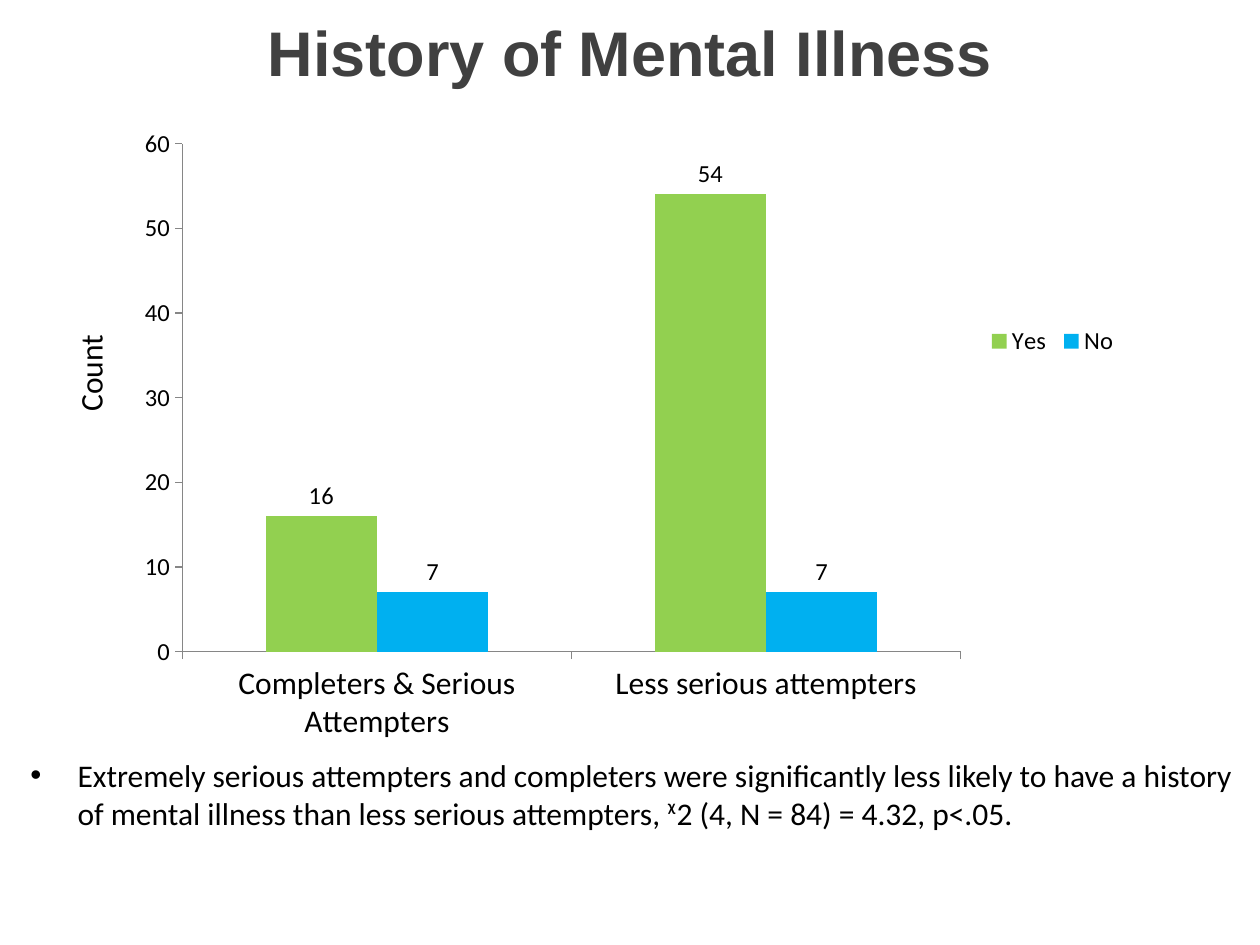
from lxml import etree
from pptx import Presentation
from pptx.chart import data
from pptx.dml import color
from pptx.enum import chart as ch, text as tx
from pptx.oxml import ns
from pptx.util import Pt

TITLE = "History of Mental Illness"
NOTE = ("Extremely serious attempters and completers were significantly less likely "
        "to have a history of mental illness than less serious attempters, "
        "ᵡ2 (4, N = 84) = 4.32, p<.05.")
AXIS = "Count"
CATS = ["Completers & Serious Attempters", "Less serious attempters"]
ROWS = [("Yes", (16, 54), "yes"), ("No", (7, 7), "no")]
HEX = {"title": "404040", "text": "000000", "line": "868686",
       "yes": "92D050", "no": "00B0F0"}
BOX = {"title": (0, -0.72, 720, 59.76), "note": (10.08, 428.4, 705.6, 51.12),
       "chart": (42.48, 71.28, 617.76, 358.56), "axis": (17.28, 198.72, 68.4, 28.8)}
PLOT = (0.1, 0.03, 0.72, 0.81)
KEY = (0.84, 0.15, 0.13, 0.39)


def rgb(name):
    return color.RGBColor.from_string(HEX[name])


def place(item, name):
    item.left, item.top, item.width, item.height = map(Pt, BOX[name])


def style(font, size, face="Calibri", tint="text", bold=False):
    font.size, font.name, font.bold = Pt(size), face, bold
    font.color.rgb = rgb(tint)


def write(item, words, align, anchor=tx.MSO_ANCHOR.TOP):
    frame = item.text_frame
    frame.text = words
    frame.word_wrap = True
    frame.auto_size = tx.MSO_AUTO_SIZE.NONE
    frame.vertical_anchor = anchor
    par = frame.paragraphs[0]
    par.alignment = align
    par.space_before = Pt(0)
    return par


def layout(host, spot, inner=False):
    for old in host.findall(ns.qn("c:layout")):
        host.remove(old)
    node = etree.Element(ns.qn("c:layout"))
    man = etree.SubElement(node, ns.qn("c:manualLayout"))
    pairs = [("layoutTarget", "inner")] if inner else []
    pairs += [("xMode", "edge"), ("yMode", "edge"), *zip("xywh", spot)]
    for tag, val in pairs:
        etree.SubElement(man, ns.qn("c:" + tag)).set("val", str(val))
    pos = host.find(ns.qn("c:legendPos"))
    if pos is None:
        host.insert(0, node)
    else:
        pos.addnext(node)


def draw(slide):
    info = data.CategoryChartData()
    info.categories = CATS
    for name, vals, _ in ROWS:
        info.add_series(name, vals)
    kind = ch.XL_CHART_TYPE.COLUMN_CLUSTERED
    chart = slide.shapes.add_chart(kind, *map(Pt, BOX["chart"]), info).chart
    style(chart.font, 18)
    chart.has_title = False
    chart.has_legend = True
    key = chart.legend
    key.position = ch.XL_LEGEND_POSITION.RIGHT
    key.include_in_layout = False
    style(key.font, 14)
    for axis, size in ((chart.category_axis, 18), (chart.value_axis, 14)):
        axis.has_major_gridlines = False
        axis.major_tick_mark = ch.XL_TICK_MARK.OUTSIDE
        axis.minor_tick_mark = ch.XL_TICK_MARK.NONE
        axis.format.line.color.rgb = rgb("line")
        axis.format.line.width = Pt(0.75)
        style(axis.tick_labels.font, size)
    scale = chart.value_axis
    scale.minimum_scale, scale.maximum_scale, scale.major_unit = 0, 60, 10
    plot = chart.plots[0]
    plot.gap_width, plot.overlap, plot.vary_by_categories = 150, 0, False
    for bars, (_, _, tint) in zip(plot.series, ROWS):
        bars.format.fill.solid()
        bars.format.fill.fore_color.rgb = rgb(tint)
        tags = bars.data_labels
        tags.show_value = True
        tags.position = ch.XL_LABEL_POSITION.OUTSIDE_END
        style(tags.font, 14)
    area = chart.element.find(".//" + ns.qn("c:plotArea"))
    layout(area, PLOT, True)
    layout(area.getnext(), KEY)


def main():
    deck = Presentation()
    deck.slide_width, deck.slide_height = Pt(720), Pt(540)
    slide = deck.slides.add_slide(deck.slide_layouts[1])

    head = slide.shapes.title
    place(head, "title")
    par = write(head, TITLE, tx.PP_ALIGN.CENTER, tx.MSO_ANCHOR.MIDDLE)
    style(par.runs[0].font, 36, "Arial", "title", True)

    note = slide.placeholders[1]
    place(note, "note")
    par = write(note, NOTE, tx.PP_ALIGN.LEFT)
    props = par._p.get_or_add_pPr()
    props.set("marL", str(Pt(27)))
    props.set("indent", str(Pt(-27)))
    etree.SubElement(props, ns.qn("a:buFont")).set("typeface", "Arial")
    etree.SubElement(props, ns.qn("a:buChar")).set("char", "•")
    style(par.runs[0].font, 18)

    draw(slide)

    side = slide.shapes.add_textbox(*map(Pt, BOX["axis"]))
    side.rotation = 270
    par = write(side, AXIS, tx.PP_ALIGN.CENTER)
    style(par.runs[0].font, 18)

    deck.save("out.pptx")


if __name__ == "__main__":
    main()
